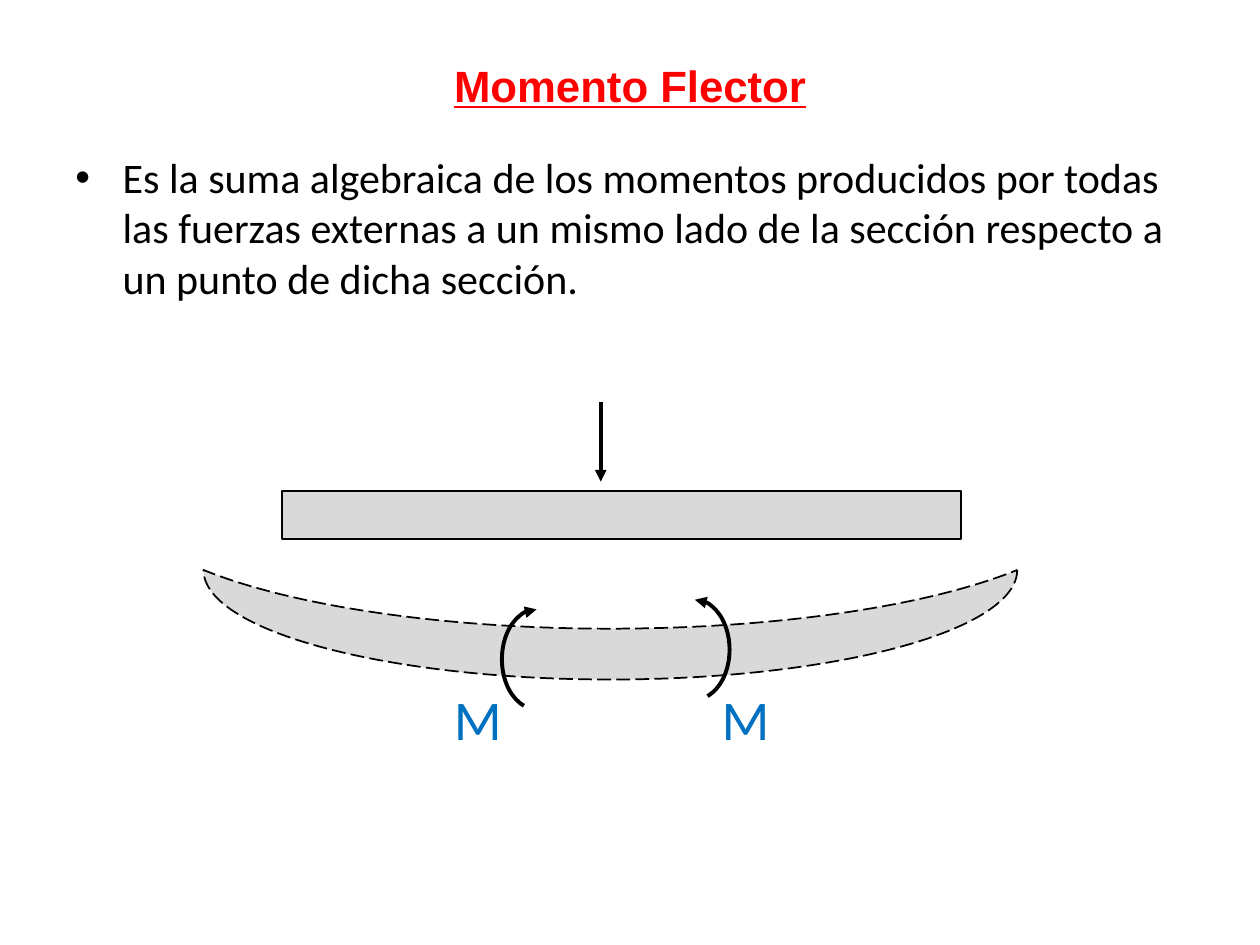
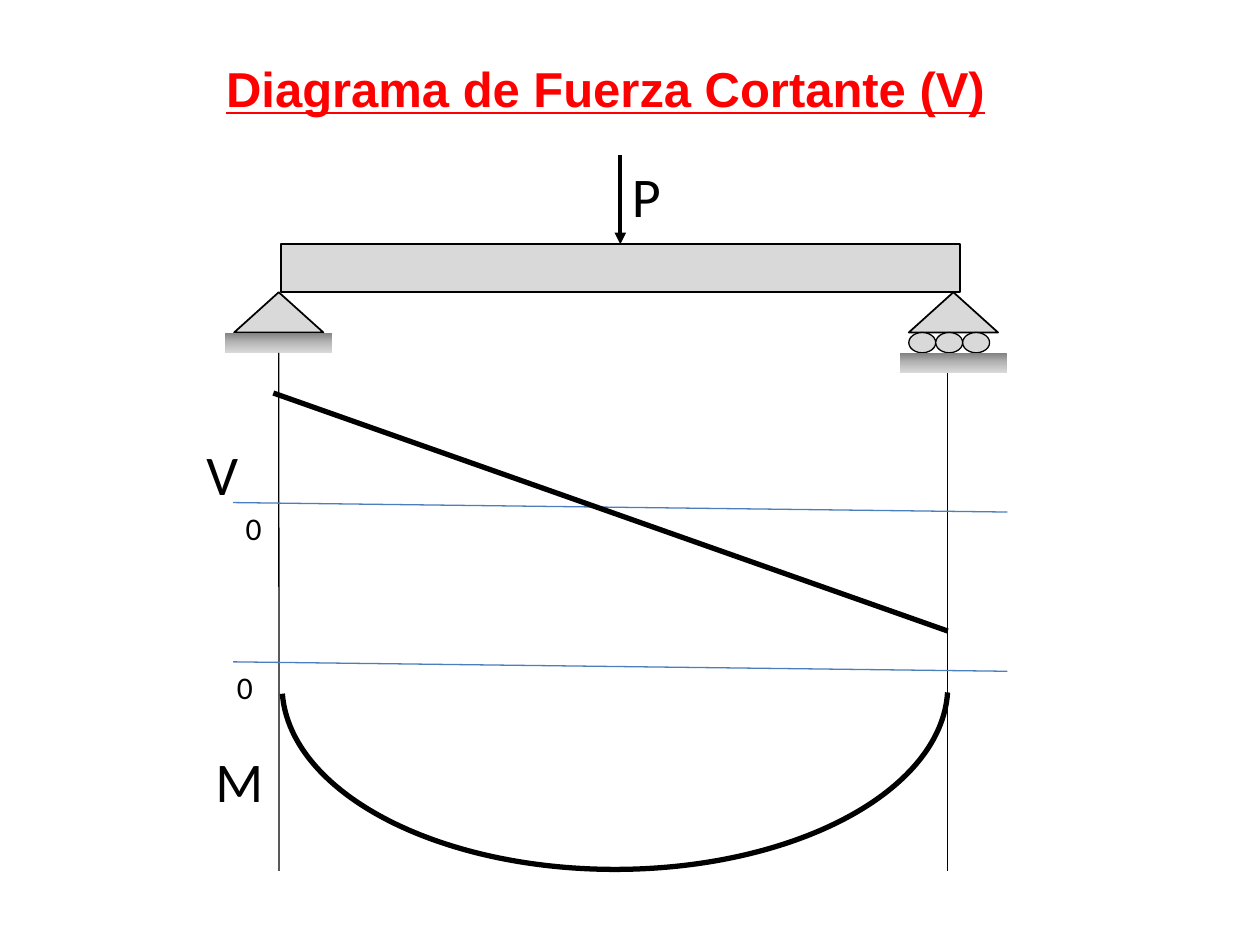
from copy import deepcopy

from lxml import etree
from pptx import Presentation
from pptx.dml.color import RGBColor
from pptx.enum import dml, shapes, text
from pptx.oxml.ns import qn
from pptx.util import Pt

BLACK, RED, BLUE = "000000", "FF0000", "0070C0"
BEAM_GREY, AXIS_BLUE = "D9D9D9", "4B7EBC"
GROUND_STOPS = [(0, "808080"), (0.5, "B7B7B7"), (1, BEAM_GREY)]
HEADING_FONT, BODY_FONT = "Arial", "Calibri"
BEAM_W, BEAM_H = 388, 27.4
PRESET = shapes.MSO_SHAPE


def color(hex_value):
    return RGBColor.from_string(hex_value)


# ---- Basic parts ----
def add_preset(slide, preset, box, fill=None, line=BLACK, weight=1):
    part = slide.shapes.add_shape(preset, *map(Pt, box))
    part.shadow.inherit = False
    if fill:
        part.fill.solid()
        part.fill.fore_color.rgb = color(fill)
    else:
        part.fill.background()
    if line:
        part.line.color.rgb = color(line)
        part.line.width = Pt(weight)
    else:
        part.line.fill.background()
    return part


def add_arrowhead(part, end):
    outline = part._element.spPr.find(qn("a:ln"))
    etree.SubElement(outline, qn(f"a:{end}"), type="triangle")


def add_line(slide, start, end, line=BLACK, weight=0.75, arrow=False):
    segment = slide.shapes.add_connector(
        shapes.MSO_CONNECTOR.STRAIGHT, *map(Pt, (*start, *end)))
    segment.line.color.rgb = color(line)
    segment.line.width = Pt(weight)
    if arrow:
        add_arrowhead(segment, "tailEnd")
    etree.SubElement(segment._element.spPr, qn("a:effectLst"))
    return segment


def add_arc(slide, box, start, end, weight):
    arc = add_preset(slide, PRESET.ARC, box, weight=weight)
    arc.adjustments[0], arc.adjustments[1] = start, end
    return arc


def add_text(slide, box, wording, size, font=BODY_FONT, ink=BLACK):
    frame = slide.shapes.add_textbox(*map(Pt, box)).text_frame
    frame.word_wrap = True
    paragraph = frame.paragraphs[0]
    run = paragraph.add_run()
    run.text = wording
    run.font.size = Pt(size)
    run.font.name = font
    run.font.color.rgb = color(ink)
    return paragraph, run


# ---- Shared text regions ----
def add_title(slide, box, wording, size):
    paragraph, run = add_text(slide, box, wording, size, HEADING_FONT, RED)
    paragraph.alignment = text.PP_ALIGN.CENTER
    run.font.bold = run.font.underline = True


def add_definition(slide, box, wording):
    paragraph, _ = add_text(slide, box, wording, 24)
    properties = paragraph._p.get_or_add_pPr()
    properties.set("marL", str(Pt(27)))
    properties.set("indent", str(-Pt(27)))
    etree.SubElement(properties, qn("a:buFont"), typeface=HEADING_FONT)
    etree.SubElement(properties, qn("a:buChar"), char="•")


def add_beam(slide, left, top):
    return add_preset(slide, PRESET.RECTANGLE, (left, top, BEAM_W, BEAM_H), BEAM_GREY)


# ---- Bending sketch ----
def add_bending_sketch(slide, box):
    left, top, width, _ = box
    add_beam(slide, left + 45, top + 51)

    # Deflected beam: a moon turned on its back
    depth = 62.6
    center_x, center_y = left + width / 2, top + 96 + depth / 2
    deflected = add_preset(
        slide, PRESET.MOON,
        (center_x - depth / 2, center_y - width / 2, depth, width), BEAM_GREY)
    deflected.rotation = 270
    deflected.adjustments[0] = 0.464
    deflected.line.dash_style = dml.MSO_LINE.LONG_DASH

    # Load
    add_line(slide, (left + 227, top), (left + 227, top + 45.5), weight=2.25, arrow=True)

    # Opposed moments and their labels
    for arc_x, arc_y, label_x, mirrored in [(261, 113, 289, False),
                                            (170.5, 118.5, 136, True)]:
        moment = add_arc(slide, (left + arc_x, top + arc_y, 39.6, 57), 162, 44.911, 2.25)
        add_arrowhead(moment, "headEnd")
        if mirrored:
            moment._element.spPr.find(qn("a:xfrm")).set("flipH", "1")
        add_text(slide, (left + label_x, top + 158, 39.6, 46), "M", 32, ink=BLUE)


# ---- Supported beam ----
def add_support(slide, left, top, rollers=0):
    roller_w, roller_h = 15.4, 11.6
    add_preset(slide, PRESET.ISOSCELES_TRIANGLE, (left + 5, top, 51, 23), BEAM_GREY)
    for i in range(rollers):
        add_preset(slide, PRESET.OVAL,
                   (left + 5 + i * roller_w, top + 23, roller_w, roller_h),
                   BEAM_GREY, weight=0.75)
    ground_top = top + 23 + (roller_h if rollers else 0)
    ground = add_preset(slide, PRESET.RECTANGLE, (left, ground_top, 61, 11.6),
                        BEAM_GREY, line=None)
    ground.fill.gradient()
    ground.fill.gradient_angle = 270
    stop_list = ground._element.spPr.find(".//" + qn("a:gsLst"))
    stop_list.append(deepcopy(stop_list[-1]))
    for stop, (position, shade) in zip(ground.fill.gradient_stops, GROUND_STOPS):
        stop.position = position
        stop.color.rgb = color(shade)
    return ground


def add_loaded_beam(slide, box):
    left, top, width, _ = box
    beam_top = top + 51
    beam = add_beam(slide, left + 31.7, beam_top)
    pin_ground = add_support(slide, left, beam_top + BEAM_H)
    add_support(slide, left + width - 61, beam_top + BEAM_H, rollers=3)

    # Load P
    load_x = left + 31.7 + BEAM_W / 2
    load = add_line(slide, (load_x, top), (load_x, beam_top), weight=2.25, arrow=True)
    load.end_connect(beam, 0)
    add_text(slide, (load_x - 0.5, top, 34, 46), "P", 32)
    return pin_ground


# ---- Shear and moment diagrams ----
def add_diagrams(slide, box, pin_ground):
    left, top, width, height = box
    first_x, last_x, bottom = left + 26.3, left + 408.4, top + height

    # Projection lines from the supports
    first_projection = add_line(slide, (first_x, top), (first_x, bottom))
    first_projection.begin_connect(pin_ground, 2)
    add_line(slide, (last_x, top + 11.6), (last_x, bottom))

    # Zero axes
    for axis_y in (85.6, 176.6):
        add_line(slide, (left, top + axis_y), (left + width, top + axis_y + 5.4), AXIS_BLUE)

    # Shear line and moment curve
    add_line(slide, (left + 23, top + 23), (last_x, top + 159), weight=3)
    curve = add_arc(slide, (left + 28, top + 85.6, 380.4, 209.6), 108.659, 215.209, 3)
    curve.rotation = 180

    # Labels
    for label, x, y, size in [("V", -22.4, 46, 32), ("M", -17.2, 221.6, 32),
                              ("0", 0, 85.6, 18), ("0", -5, 176.4, 18)]:
        add_text(slide, (left + x, top + y, 34, size * 1.44), label, size)


def build_moment_slide(slide):
    add_title(slide, (60, 30, 600, 37.5), "Momento Flector", 25)
    add_definition(
        slide, (36, 83, 648, 102),
        "Es la suma algebraica de los momentos producidos por todas las fuerzas "
        "externas a un mismo lado de la sección respecto a un punto de dicha sección.")
    add_bending_sketch(slide, (116.3, 229.7, 465, 204))


def build_shear_slide(slide):
    add_title(slide, (99.5, 30, 493, 41), "Diagrama de Fuerza Cortante (V)", 28)
    pin_ground = add_loaded_beam(slide, (128.8, 88.6, 446.5, 125))
    add_diagrams(slide, (133.2, 201.6, 442.4, 296), pin_ground)


def main():
    deck = Presentation()
    deck.slide_width, deck.slide_height = Pt(720), Pt(540)
    for build in (build_moment_slide, build_shear_slide):
        build(deck.slides.add_slide(deck.slide_layouts[6]))
    deck.save("out.pptx")


if __name__ == "__main__":
    main()
